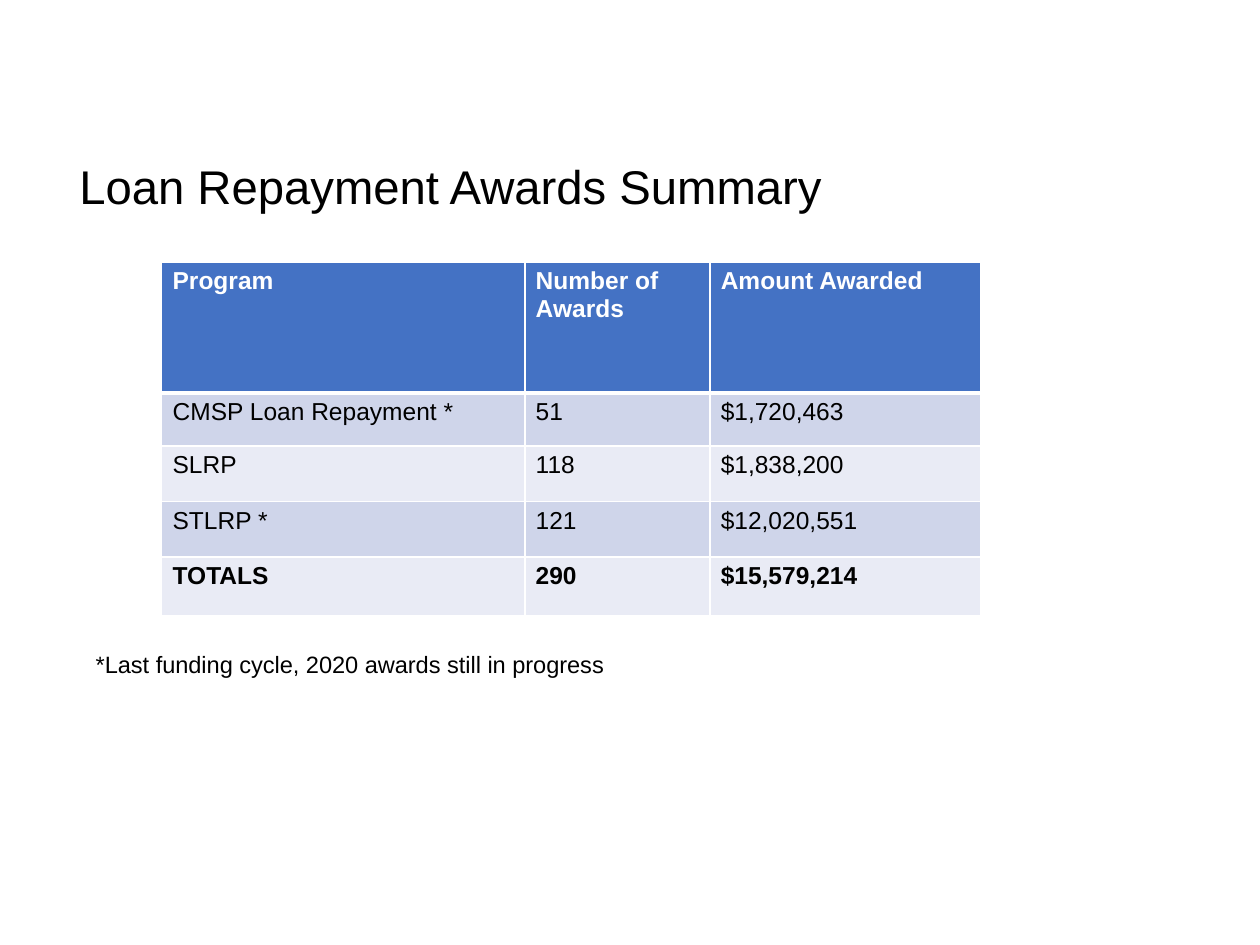
from dataclasses import dataclass

import pptx
import pptx.dml.color
import pptx.enum.text
import pptx.oxml
import pptx.oxml.ns
import pptx.util
from pptx.util import Cm


@dataclass(frozen=True)
class Theme:
    font: str = "Arial"
    text: str = "000000"
    light: str = "FFFFFF"
    header: str = "4472C4"
    bands: tuple = ("CFD5EA", "E9EBF5")
    title_size: float = 27
    table_size: float = 14
    note_size: float = 13.5
    border: float = 1
    header_rule: float = 3


THEME = Theme()
COLUMNS = (7.32, 3.73, 5.46)
ROWS = (2.64, 1.07, 1.12, 1.12, 1.19)
AWARDS = (
    ("Program", "Number of Awards", "Amount Awarded"),
    ("CMSP Loan Repayment *", "51", "$1,720,463"),
    ("SLRP", "118", "$1,838,200"),
    ("STLRP *", "121", "$12,020,551"),
    ("TOTALS", "290", "$15,579,214"),
)


def add_span(para, text, size, color=THEME.text, bold=False):
    span = para.add_run()
    span.text = text
    span.font.name = THEME.font
    span.font.size = pptx.util.Pt(size)
    span.font.bold = bold
    span.font.color.rgb = pptx.dml.color.RGBColor.from_string(color)


def add_text(page, left, top, width, height, text, size):
    box = page.shapes.add_textbox(Cm(left), Cm(top), Cm(width), Cm(height))
    box.text_frame.word_wrap = True
    add_span(box.text_frame.paragraphs[0], text, size)
    return box.text_frame


def add_title(page):
    """Centre the title in the upper part of its box."""
    frame = add_text(page, 1.35, 3.58, 21.9, 1.5,
                     "Loan Repayment Awards Summary", THEME.title_size)
    frame.vertical_anchor = pptx.enum.text.MSO_ANCHOR.MIDDLE
    frame.margin_bottom = Cm(1.17)
    frame.paragraphs[0].line_spacing = 0.9


def add_note(page):
    frame = add_text(page, 1.75, 13, 14.83, 0.76,
                     "*Last funding cycle, 2020 awards still in progress",
                     THEME.note_size)
    frame.margin_left = frame.margin_right = Cm(0.18)
    frame.margin_top = frame.margin_bottom = Cm(0.1)
    frame.auto_size = pptx.enum.text.MSO_AUTO_SIZE.SHAPE_TO_FIT_TEXT


def set_borders(cell, widths):
    """Draw left, right, top and bottom lines, with widths in points."""
    properties = cell._tc.get_or_add_tcPr()
    for index, (side, width) in enumerate(zip("LRTB", widths)):
        line = pptx.oxml.parse_xml(
            f'<a:ln{side} {pptx.oxml.ns.nsdecls("a")} w="{pptx.util.Pt(width)}">'
            f'<a:solidFill><a:srgbClr val="{THEME.light}"/></a:solidFill>'
            f'</a:ln{side}>')
        properties.insert(index, line)


def fill_cell(cell, text, row):
    is_header = row == 0
    is_total = row == len(AWARDS) - 1
    fill = THEME.header if is_header else THEME.bands[(row - 1) % 2]
    cell.fill.solid()
    cell.fill.fore_color.rgb = pptx.dml.color.RGBColor.from_string(fill)
    cell.margin_left = cell.margin_right = Cm(0.22)
    cell.margin_top = cell.margin_bottom = Cm(0.11)
    add_span(cell.text_frame.paragraphs[0], text, THEME.table_size,
             THEME.light if is_header else THEME.text, is_header or is_total)
    top = THEME.header_rule if row == 1 else THEME.border
    bottom = THEME.header_rule if is_header else THEME.border
    set_borders(cell, (THEME.border, THEME.border, top, bottom))


def add_awards_table(page):
    table = page.shapes.add_table(
        len(ROWS), len(COLUMNS), Cm(3.26), Cm(5.28),
        Cm(sum(COLUMNS)), Cm(sum(ROWS))).table
    for column, width in zip(table.columns, COLUMNS):
        column.width = Cm(width)
    for row, height in enumerate(ROWS):
        table.rows[row].height = Cm(height)
        for column, text in enumerate(AWARDS[row]):
            fill_cell(table.cell(row, column), text, row)


def main():
    deck = pptx.Presentation()
    deck.slide_width, deck.slide_height = Cm(25.4), Cm(19.05)
    page = deck.slides.add_slide(deck.slide_layouts[6])
    add_title(page)
    add_awards_table(page)
    add_note(page)
    deck.save("out.pptx")


if __name__ == "__main__":
    main()
